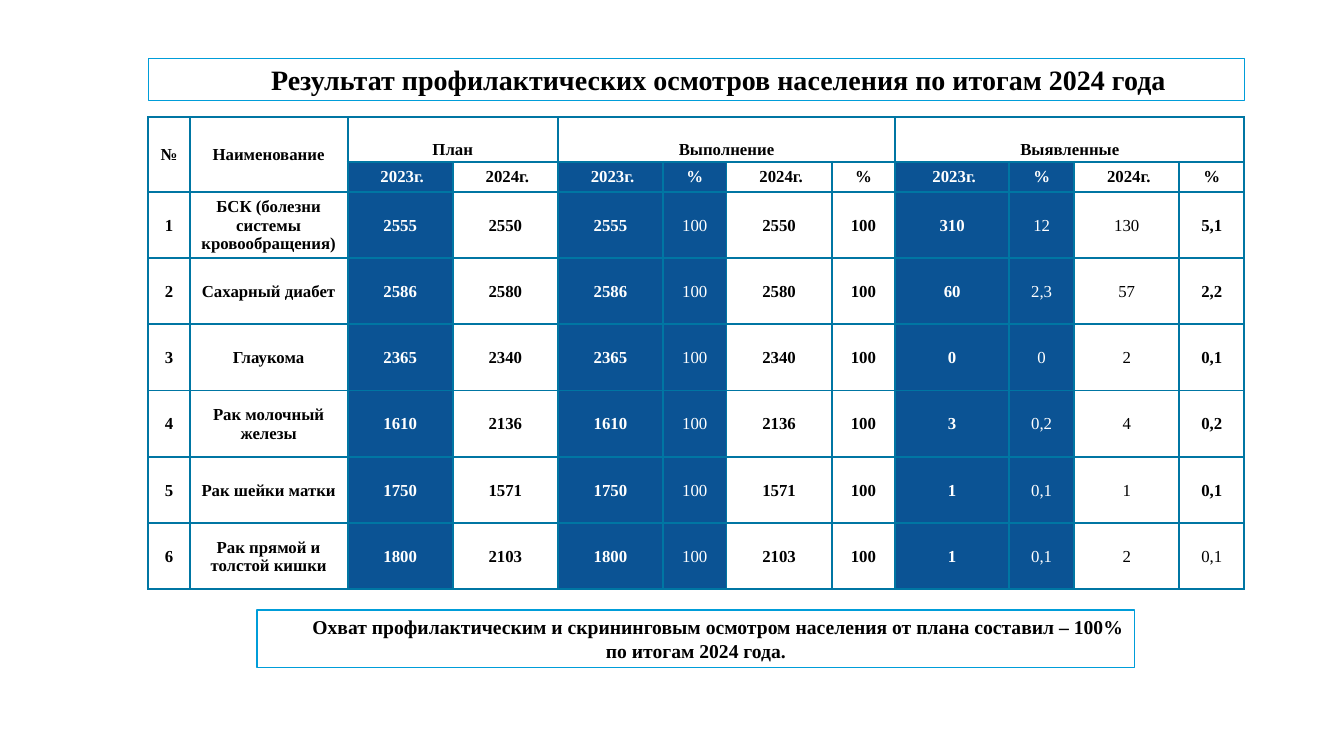
from lxml import etree
from pptx import Presentation
from pptx import util as u
from pptx.dml.color import RGBColor
from pptx.enum import shapes, text
from pptx.oxml.ns import qn

COLORS = {"white": "FFFFFF", "black": "000000", "blue": "0B5394",
          "frame": "009DD9", "grid": "0076A3"}
COLS = [1.04, 3.98, 2.65, 2.65, 2.65, 1.6, 2.65, 1.6, 2.87, 1.64, 2.65, 1.64]
ROWS = [1.13, 0.75] + [1.67] * 6
BLUE_COLS = {2, 4, 5, 8, 9}
LIGHT_COLS = {5, 9, 10}
SPANS = [(0, 0, 1, 0), (0, 1, 1, 1), (0, 2, 0, 3), (0, 4, 0, 7), (0, 8, 0, 11)]
HEADS = ["№", "Наименование", "План", "", "Выполнение", "", "", "",
         "Выявленные", "", "", ""]
YEARS = [" 2023г.", " 2024г."]
YEARS_PCT = [" 2023г.", "%", " 2024г.", "%"]
CHECKUPS = [
    ("БСК (болезни системы кровообращения)", "2555", "2550", "310", "12", "130", "5,1"),
    ("Сахарный диабет", "2586", "2580", "60", "2,3", "57", "2,2"),
    ("Глаукома", "2365", "2340", "0", "0", "2", "0,1"),
    ("Рак молочный железы", "1610", "2136", "3", "0,2", "4", "0,2"),
    ("Рак шейки матки", "1750", "1571", "1", "0,1", "1", "0,1"),
    ("Рак прямой и толстой кишки", "1800", "2103", "1", "0,1", "2", "0,1"),
]


class Deck:
    """Holds the style and the current slide and draws its elements."""

    font = "Times New Roman"

    def __init__(self, prs):
        self.s = prs.slides.add_slide(prs.slide_layouts[6])

    def color(self, name):
        return RGBColor.from_string(COLORS[name])

    def label(self, tf, words, size, color="black", bold=True):
        p = tf.paragraphs[0]
        p.alignment = text.PP_ALIGN.CENTER
        r = p.add_run()
        r.text = words
        for key, value in {"name": self.font, "size": u.Pt(size), "bold": bold}.items():
            setattr(r.font, key, value)
        r.font.color.rgb = self.color(color)
        return p

    def banner(self, box, words, size, inset):
        sp = self.s.shapes.add_shape(shapes.MSO_SHAPE.RECTANGLE, *map(u.Cm, box))
        sp.shadow.inherit = False
        sp.fill.solid()
        sp.fill.fore_color.rgb = self.color("white")
        sp.line.color.rgb = self.color("frame")
        sp.line.width = u.Pt(1)
        side, edge = map(u.Cm, inset)
        tf = sp.text_frame
        for key, value in {"word_wrap": True, "margin_left": side, "margin_right": side,
                           "margin_top": edge, "margin_bottom": edge,
                           "vertical_anchor": text.MSO_ANCHOR.MIDDLE,
                           "auto_size": text.MSO_AUTO_SIZE.SHAPE_TO_FIT_TEXT}.items():
            setattr(tf, key, value)
        p = self.label(tf, words, size)
        p._p.get_or_add_pPr().set("indent", str(u.Cm(1.12)))

    def borders(self, cell):
        tcPr = cell._tc.get_or_add_tcPr()
        for side in ("a:lnL", "a:lnR", "a:lnT", "a:lnB"):
            ln = etree.SubElement(tcPr, qn(side), w=str(u.Pt(1.5)))
            fill = etree.SubElement(ln, qn("a:solidFill"))
            etree.SubElement(fill, qn("a:srgbClr"), val=COLORS["grid"])

    def cell(self, cell, words, blue, bold, spacing):
        self.borders(cell)
        for key, value in {"margin_left": u.Cm(0.03), "margin_right": u.Cm(0.03),
                           "margin_top": u.Cm(0.03), "margin_bottom": 0,
                           "vertical_anchor": text.MSO_ANCHOR.MIDDLE}.items():
            setattr(cell, key, value)
        if blue:
            cell.fill.solid()
            cell.fill.fore_color.rgb = self.color("blue")
        else:
            cell.fill.background()
        if words:
            p = self.label(cell.text_frame, words, 12, "white" if blue else "black", bold)
            if spacing:
                p.line_spacing = spacing

    def table(self, left, top, rows):
        size = map(u.Cm, (left, top, sum(COLS), sum(ROWS)))
        table = self.s.shapes.add_table(len(ROWS), len(COLS), *size).table
        table.first_row = table.horz_banding = False
        for col, width in zip(table.columns, COLS):
            col.width = u.Cm(width)
        for row, height in zip(table.rows, ROWS):
            row.height = u.Cm(height)
        for r0, c0, r1, c1 in SPANS:
            table.cell(r0, c0).merge(table.cell(r1, c1))
        last = (len(ROWS) - 1, len(COLS) - 1)
        for i, row in enumerate(rows):
            for j, words in enumerate(row):
                light = i > 1 and j in LIGHT_COLS or (i, j) == last
                self.cell(table.cell(i, j), words, i > 0 and j in BLUE_COLS,
                          not light, 2.0 if i == 0 and j > 1 else None)


def main():
    prs = Presentation()
    prs.slide_width, prs.slide_height = u.Cm(33.87), u.Cm(19.05)
    deck = Deck(prs)
    deck.banner((3.74, 1.48, 27.62, 1.05),
                "Результат профилактических осмотров населения по итогам 2024 года",
                20, (0.18, 0.1))
    deck.banner((6.48, 15.37, 22.12, 1.45),
                "Охват профилактическим и скрининговым осмотром населения "
                "от плана составил – 100% по итогам 2024 года.", 14, (0.25, 0.13))
    rows = [HEADS, ["", ""] + YEARS + YEARS_PCT * 2]
    for n, (name, prev, now, *found) in enumerate(CHECKUPS, 1):
        rows.append([str(n), name, prev, now, prev, "100", now, "100", *found])
    deck.table(3.74, 2.95, rows)
    prs.save("out.pptx")


if __name__ == "__main__":
    main()
